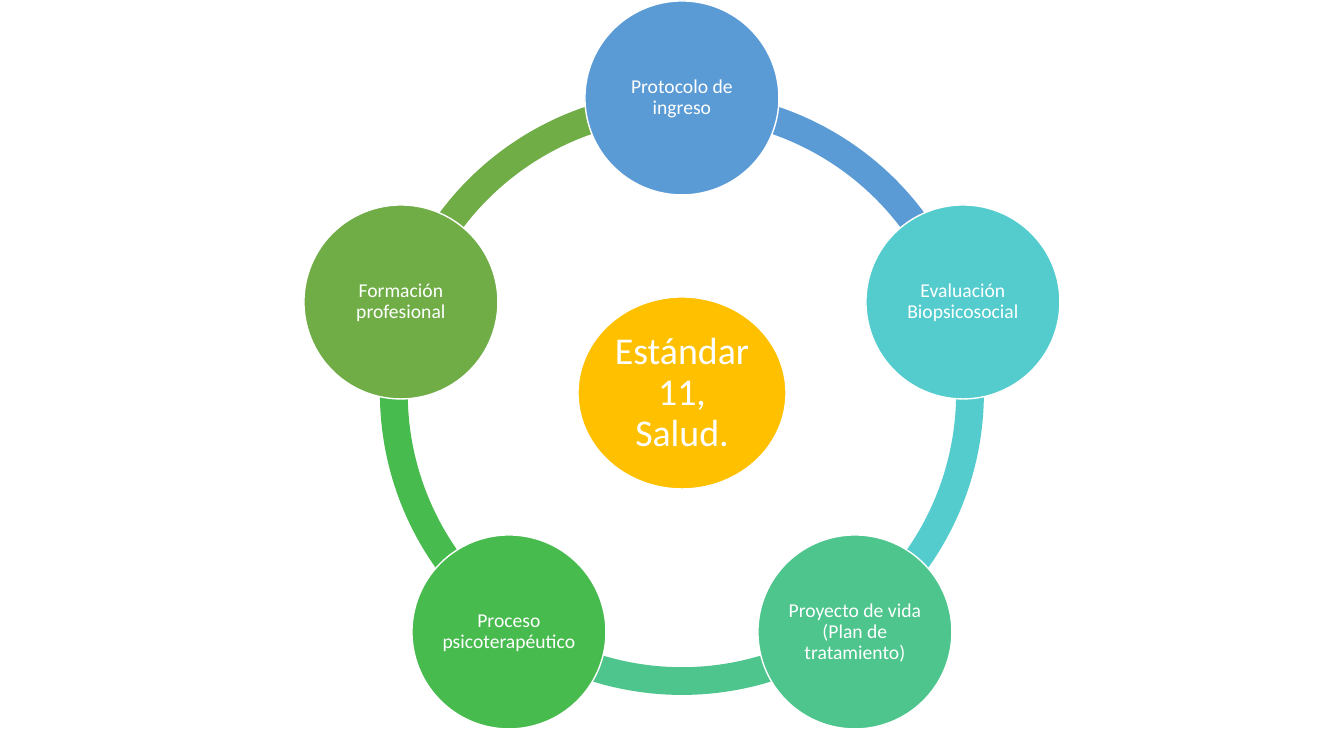
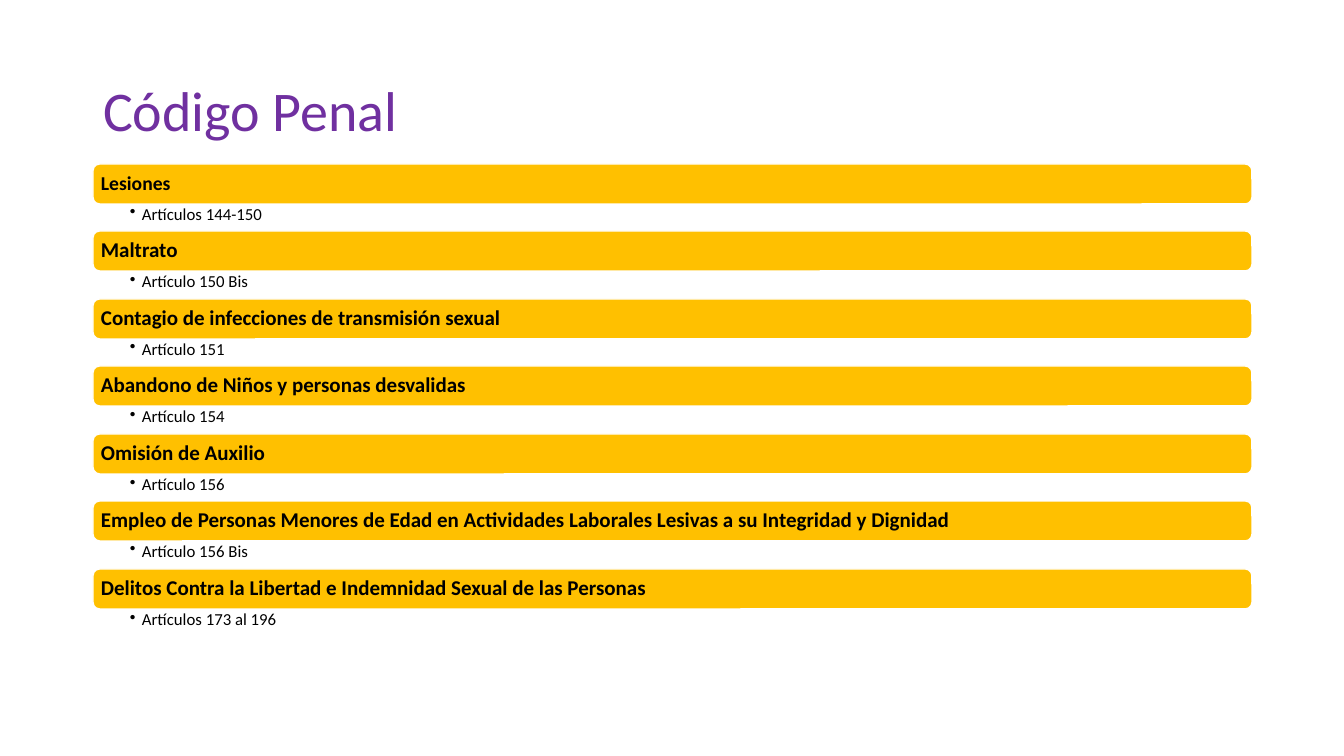
import math

import pptx
import pptx.dml.color
import pptx.enum.shapes
import pptx.enum.text
import pptx.oxml.ns
import pptx.util
from lxml import etree

RGBColor = pptx.dml.color.RGBColor
Shape = pptx.enum.shapes.MSO_SHAPE
Align = pptx.enum.text.PP_ALIGN
Anchor = pptx.enum.text.MSO_ANCHOR

WHITE = RGBColor(0xFF, 0xFF, 0xFF)
BLACK = RGBColor(0x00, 0x00, 0x00)
AMBER = RGBColor(0xFF, 0xC0, 0x00)
PURPLE = RGBColor(0x70, 0x30, 0xA0)
BLUE = RGBColor(0x5B, 0x9B, 0xD5)
TURQUOISE = RGBColor(0x54, 0xCC, 0xCD)
MINT = RGBColor(0x4D, 0xC5, 0x8D)
GREEN = RGBColor(0x48, 0xBB, 0x4F)
OLIVE = RGBColor(0x70, 0xAD, 0x47)

FONT = "Calibri"
WIDTH, HEIGHT = 1344, 756
EMU_PER_PX = 12192000 / WIDTH

CARE_STEPS = [
    ("Protocolo de ingreso", BLUE),
    ("Evaluación Biopsicosocial", TURQUOISE),
    ("Proyecto de vida (Plan de tratamiento)", MINT),
    ("Proceso psicoterapéutico", GREEN),
    ("Formación profesional", OLIVE),
]

OFFENCES = [
    ("Lesiones", 14, "Artículos 144-150"),
    ("Maltrato", 15, "Artículo 150 Bis"),
    ("Contagio de infecciones de transmisión sexual", 15, "Artículo 151"),
    ("Abandono de Niños y personas desvalidas", 15, "Artículo 154"),
    ("Omisión de Auxilio", 15, "Artículo 156"),
    ("Empleo de Personas Menores de Edad en Actividades Laborales Lesivas "
     "a su Integridad y Dignidad", 15, "Artículo 156 Bis"),
    ("Delitos Contra la Libertad e Indemnidad Sexual de las Personas", 15,
     "Artículos 173 al 196"),
]


def px(length):
    return pptx.util.Emu(round(length * EMU_PER_PX))


def add_bullet(para, indent):
    properties = para._p.get_or_add_pPr()
    properties.set("marL", str(px(indent)))
    properties.set("indent", str(-px(indent)))
    bullet = etree.SubElement(properties, pptx.oxml.ns.qn("a:buChar"))
    bullet.set("char", "•")


def write(frame, text, size, color, bold=False, align=Align.LEFT,
          anchor=Anchor.MIDDLE, insets=None, bullet_indent=None):
    """Fill a text frame with one paragraph; insets run left, top, right, bottom."""
    frame.word_wrap = True
    frame.auto_size = pptx.enum.text.MSO_AUTO_SIZE.NONE
    frame.vertical_anchor = anchor
    if insets:
        (frame.margin_left, frame.margin_top,
         frame.margin_right, frame.margin_bottom) = map(px, insets)
    para = frame.paragraphs[0]
    if bullet_indent:
        para.level = 1
        add_bullet(para, bullet_indent)
    para.alignment = align
    para.line_spacing = 0.9
    span = para.add_run()
    span.text = text
    span.font.name = FONT
    span.font.size = pptx.util.Pt(size)
    span.font.bold = bold
    span.font.color.rgb = color


class Slides:
    """Holds the deck, its style and the slide being built."""

    def __init__(self):
        self.deck = pptx.Presentation()
        self.deck.slide_width, self.deck.slide_height = px(WIDTH), px(HEIGHT)
        self.page = None

    def new_page(self, layout):
        self.page = self.deck.slides.add_slide(
            self.deck.slide_layouts.get_by_name(layout))

    def title(self, text, left, top, width, height):
        box = self.page.shapes.title
        box.left, box.top, box.width, box.height = map(
            px, (left, top, width, height))
        write(box.text_frame, text, 40, PURPLE)

    def shape(self, kind, left, top, width, height, fill, outlined=True):
        shape = self.page.shapes.add_shape(
            kind, *map(px, (left, top, width, height)))
        shape.shadow.inherit = False
        shape.fill.solid()
        shape.fill.fore_color.rgb = fill
        if outlined:
            shape.line.color.rgb = WHITE
            shape.line.width = pptx.util.Pt(1)
        else:
            shape.line.fill.background()
        return shape

    def arc(self, center_x, center_y, diameter, start, end, fill):
        """Draw a clockwise ring segment; angles are degrees from the right."""
        arc = self.shape(Shape.BLOCK_ARC, center_x - diameter // 2,
                         center_y - diameter // 2, diameter, diameter,
                         fill, outlined=False)
        # Angles are stored in 1/60000 degree, adjustments in units of 100000.
        arc.adjustments[0] = start % 360 * 0.6
        arc.adjustments[1] = end % 360 * 0.6
        arc.adjustments[2] = 0.046

    def disc(self, text, center_x, center_y, width, height, fill, size, inset):
        disc = self.shape(Shape.OVAL, center_x - width // 2,
                          center_y - height // 2, width, height, fill)
        write(disc.text_frame, text, size, WHITE, align=Align.CENTER,
              insets=[inset] * 4)

    def bar(self, text, size, left, top, width, height):
        bar = self.shape(Shape.ROUNDED_RECTANGLE, left, top, width, height, AMBER)
        write(bar.text_frame, text, size, BLACK, bold=True, insets=[6] * 4)

    def bullet(self, text, left, top, width, height):
        box = self.page.shapes.add_textbox(*map(px, (left, top, width, height)))
        write(box.text_frame, text, 12, BLACK, anchor=Anchor.TOP,
              insets=(37, 2, 12, 2), bullet_indent=12)


def build_health_cycle(slides):
    slides.new_page("Blank")
    center_x, center_y, orbit = 682, 393, 295
    step = 360 // len(CARE_STEPS)
    angles = [270 + step * index for index in range(len(CARE_STEPS))]
    for angle, (_, color) in zip(angles, CARE_STEPS):
        slides.arc(center_x, center_y, 604, angle, angle + step, color)
    slides.disc("Estándar 11, Salud.", center_x, center_y, 208, 192, AMBER, 27, 4)
    for angle, (text, color) in zip(angles, CARE_STEPS):
        x = center_x + round(orbit * math.cos(math.radians(angle)))
        y = center_y + round(orbit * math.sin(math.radians(angle)))
        slides.disc(text, x, y, 194, 194, color, 14, 2)


def build_penal_code(slides):
    slides.new_page("Title Only")
    left, width = 93, 1159
    slides.title("Código Penal", left, 40, width, 146)
    for row, (offence, size, articles) in enumerate(OFFENCES):
        top = 164 + row * 135 // 2
        slides.bar(offence, size, left, top, width, 40)
        slides.bullet(articles, left, top + 40, width, 27)


def main():
    slides = Slides()
    build_health_cycle(slides)
    build_penal_code(slides)
    slides.deck.save("out.pptx")


if __name__ == "__main__":
    main()
